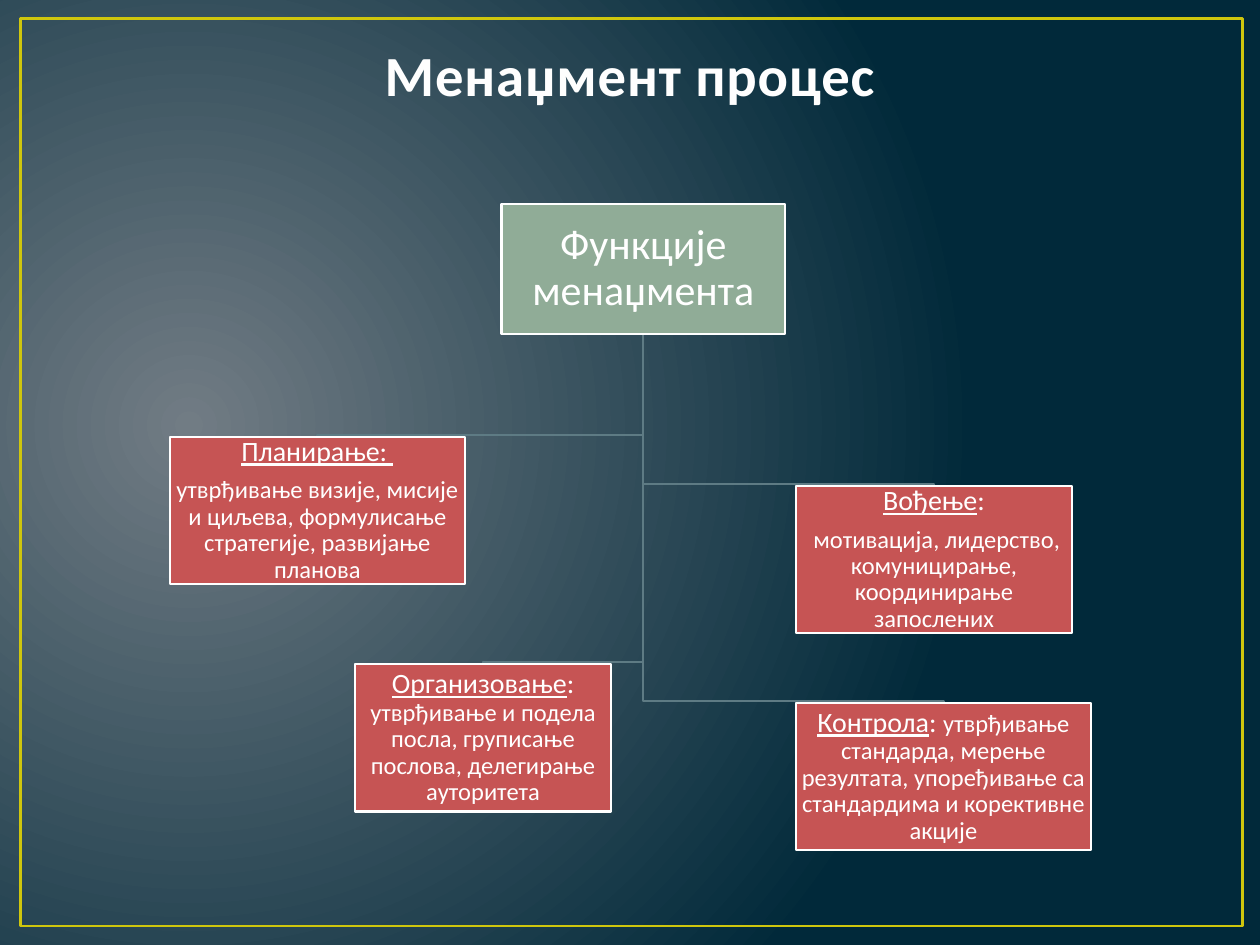
import dataclasses

import lxml.etree
import pptx
import pptx.dml.color
import pptx.enum.shapes
import pptx.enum.text
import pptx.oxml
import pptx.oxml.ns
import pptx.util

Cm = pptx.util.Cm
Pt = pptx.util.Pt
qn = pptx.oxml.ns.qn


@dataclasses.dataclass(frozen=True)
class Theme:
    """Colours, font and type sizes of the slide."""
    font: str = "Calibri"
    glow: str = "717C84"
    night: str = "01293A"
    frame: str = "CFC60D"
    title: str = "FEFEFE"
    title_outline: str = "384F55"
    branch: str = "5E7B84"
    root: str = "90AC97"
    function: str = "C65454"
    white: str = "FFFFFF"
    title_size: float = 32.4
    root_size: float = 24
    name_size: float = 16
    detail_size: float = 14
    line_width: float = 1.25
    frame_width: float = 1.5


THEME = Theme()
ROOT = (10.11, 4.11, 5.72, 2.62)
FUNCTION_HEIGHT = 2.97
ELBOW_RISE = 0.04
FUNCTIONS = [
    (3.43, 8.81, 5.94, [
        [("Планирање: ", True, THEME.name_size)],
        [("утврђивање визије, мисије и циљева, формулисање стратегије, развијање планова",
          False, THEME.detail_size)]]),
    (7.16, 13.39, 5.16, [
        [("Организовање", True, THEME.name_size), (": ", False, THEME.name_size),
         ("утврђивање и подела посла, груписање послова, делегирање ауторитета",
          False, THEME.detail_size)]]),
    (16.05, 9.8, 5.56, [
        [("Вођење", True, THEME.name_size), (":", False, THEME.name_size)],
        [(" мотивација, лидерство, комуницирање, координирање запослених",
          False, THEME.detail_size)]]),
    (16.05, 14.17, 5.94, [
        [("Контрола", True, THEME.name_size), (": ", False, THEME.name_size),
         ("утврђивање стандарда, мерење резултата, упоређивање са стандардима "
          "и корективне акције", False, THEME.detail_size)]]),
]


def rgb(value):
    """Turn a hex string into a colour."""
    return pptx.dml.color.RGBColor.from_string(value)


def set_line(shape, colour, width):
    """Give a shape a solid line and no shadow."""
    shape.shadow.inherit = False
    shape.line.color.rgb = rgb(colour)
    shape.line.width = Pt(width)


def format_font(font, size, colour):
    """Set the theme font with a size and a colour."""
    font.name = THEME.font
    font.size = Pt(size)
    font.color.rgb = rgb(colour)


def paint_background(slide):
    """Fill the background with a circular gradient."""
    fill = slide.background.fill
    fill.gradient()
    for stop, colour in zip(fill.gradient_stops, (THEME.glow, THEME.night)):
        stop.color.rgb = rgb(colour)
    linear = next(slide.element.iter(qn("a:lin")))
    circle = lxml.etree.Element(qn("a:path"), {"path": "circle"})
    lxml.etree.SubElement(circle, qn("a:fillToRect"),
                          {"l": "15000", "t": "50000", "r": "85000", "b": "60000"})
    linear.getparent().replace(linear, circle)


def add_frame(slide):
    """Draw the thin border around the slide."""
    frame = slide.shapes.add_shape(pptx.enum.shapes.MSO_SHAPE.RECTANGLE,
                                   Cm(0.41), Cm(0.38), Cm(24.64), Cm(18.29))
    frame.fill.background()
    set_line(frame, THEME.frame, THEME.frame_width)


def set_title(slide, text):
    """Place and format the title with its letter outline."""
    title = slide.shapes.title
    title.left, title.top, title.width, title.height = Cm(1.27), Cm(0.76), Cm(22.86), Cm(1.55)
    frame = title.text_frame
    frame.text = text
    frame.vertical_anchor = pptx.enum.text.MSO_ANCHOR.BOTTOM
    paragraph = frame.paragraphs[0]
    paragraph.alignment = pptx.enum.text.PP_ALIGN.CENTER
    run = paragraph.runs[0]
    format_font(run.font, THEME.title_size, THEME.title)
    run.font.bold = True
    properties = run.font._element
    properties.set("spc", "50")
    outline = lxml.etree.Element(qn("a:ln"), {"w": str(Pt(1.05))})
    solid = lxml.etree.SubElement(outline, qn("a:solidFill"))
    lxml.etree.SubElement(solid, qn("a:srgbClr"), {"val": THEME.title_outline})
    properties.insert(0, outline)


def add_branch(slide, left, top, width):
    """Draw an elbow line from the root box to the top of a function box."""
    root_left, root_top, root_width, root_height = ROOT
    trunk = Cm(root_left + root_width / 2)
    end = Cm(left + width / 2)
    elbow = Cm(top - ELBOW_RISE)
    builder = slide.shapes.build_freeform(trunk, Cm(root_top + root_height))
    builder.add_line_segments([(trunk, elbow), (end, elbow), (end, Cm(top))], close=False)
    branch = builder.convert_to_shape()
    branch.fill.background()
    set_line(branch, THEME.branch, THEME.line_width)


def add_box(slide, bounds, colour, paragraphs, inset):
    """Add a filled box holding paragraphs of (text, underlined, size) runs."""
    box = slide.shapes.add_shape(pptx.enum.shapes.MSO_SHAPE.RECTANGLE, *map(Cm, bounds))
    box.fill.solid()
    box.fill.fore_color.rgb = rgb(colour)
    set_line(box, THEME.white, THEME.line_width)
    frame = box.text_frame
    frame.word_wrap = True
    frame.vertical_anchor = pptx.enum.text.MSO_ANCHOR.MIDDLE
    frame.margin_left = frame.margin_right = frame.margin_top = frame.margin_bottom = Cm(inset)
    for index, runs in enumerate(paragraphs):
        paragraph = frame.add_paragraph() if index else frame.paragraphs[0]
        paragraph.alignment = pptx.enum.text.PP_ALIGN.CENTER
        paragraph.line_spacing = 0.9
        paragraph.space_after = Pt(round(runs[0][2] * 0.35, 1))
        for text, underlined, size in runs:
            run = paragraph.add_run()
            run.text = text
            run.font.underline = underlined
            format_font(run.font, size, THEME.white)


def main():
    """Build the slide and save it."""
    presentation = pptx.Presentation()
    presentation.slide_width, presentation.slide_height = Cm(25.4), Cm(19.05)
    slide = presentation.slides.add_slide(presentation.slide_layouts[5])
    paint_background(slide)
    add_frame(slide)
    set_title(slide, "Менаџмент процес")
    for left, top, width, _ in reversed(FUNCTIONS):
        add_branch(slide, left, top, width)
    add_box(slide, ROOT, THEME.root,
            [[("Функције менаџмента", False, THEME.root_size)]], 0.05)
    for left, top, width, paragraphs in FUNCTIONS:
        add_box(slide, (left, top, width, FUNCTION_HEIGHT), THEME.function, paragraphs, 0.03)
    presentation.save("out.pptx")


if __name__ == "__main__":
    main()
